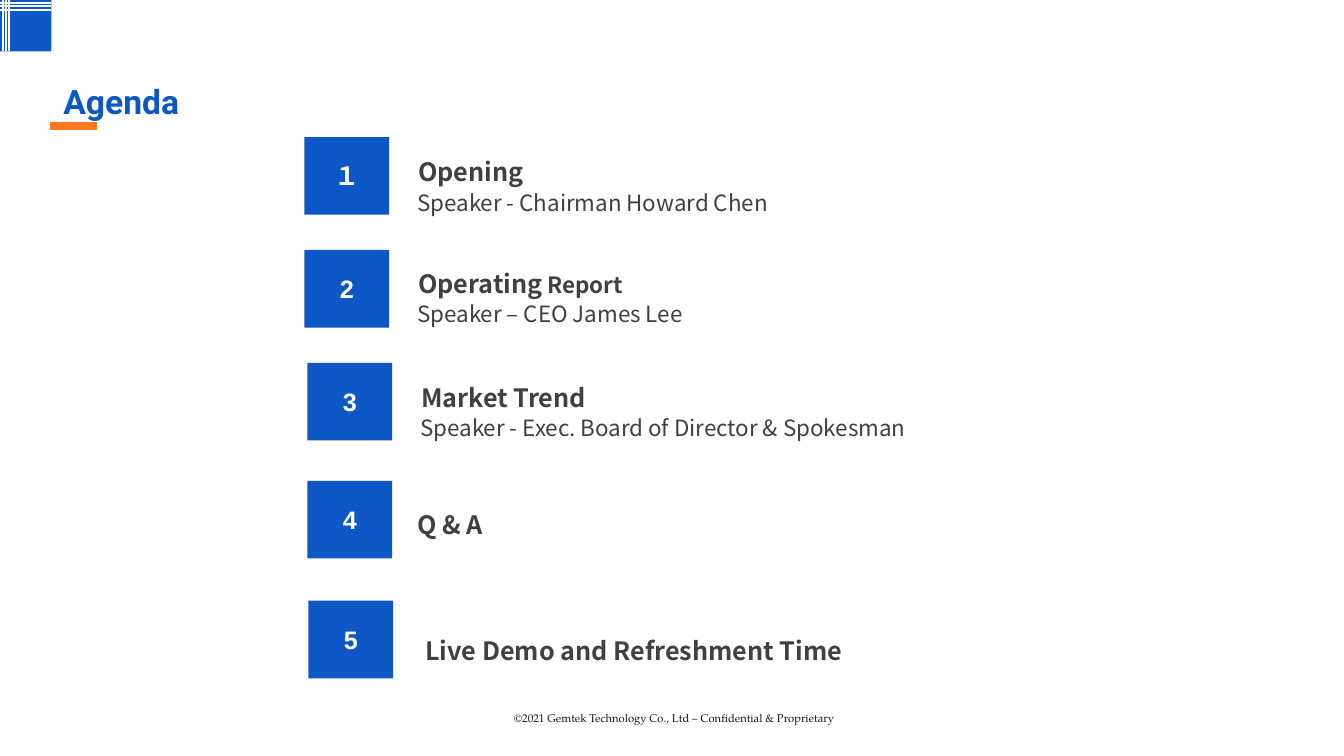
"""Build the agenda slide with five numbered topics and their speakers."""
from pptx import Presentation
from pptx.dml.color import RGBColor
from pptx.enum.shapes import MSO_CONNECTOR as Connector, MSO_SHAPE as Shape
from pptx.enum.text import MSO_ANCHOR as Anchor, PP_ALIGN as Align
from pptx.oxml.ns import qn
from pptx.util import Inches, Pt
from lxml import etree

COLORS = {"blue": "0D58C4", "title": "0B58C4", "orange": "FF7822",
          "white": "FFFFFF", "text": "404040", "footer": "181717"}
BODY_FONT = "Noto Sans CJK SC"
TITLE = "Agenda"
FOOTER = "©2021 Gemtek Technology Co., Ltd – Confidential & Proprietary"
TOPICS = [
    {"number": "１", "tile": (3.02, 1.36), "label": (4.05, 1.35, 3.23),
     "heading": [("Opening", 18)], "speaker": "Speaker - Chairman Howard Chen"},
    {"number": "2", "tile": (3.02, 2.48), "label": (4.05, 2.46, 3.23),
     "heading": [("Operating", 18), (" Report", 16)], "speaker": "Speaker – CEO James Lee"},
    {"number": "3", "tile": (3.05, 3.6), "label": (4.08, 3.59, 3.23),
     "heading": [("Market Trend", 18)],
     "speaker": "Speaker - Exec. Board of Director & Spokesman"},
    {"number": "4", "tile": (3.05, 4.77), "label": (4.04, 4.85, 3.23),
     "heading": [("Q & A", 18)], "speaker": None},
    {"number": "5", "tile": (3.06, 5.96), "label": (4.12, 6.1, 5.99),
     "heading": [("Live Demo and Refreshment Time", 18)], "speaker": None},
]
CORNER = 0.51
COLUMN_STRIPES = [(0.03, 1.5), (0.06, 1), (0.08, 0.5), (0.09, 0.25)]
ROW_STRIPES = [(0.03, 1.5), (0.06, 1), (0.09, 0.5), (0.1, 0.25)]
TILE_SIZE = (0.84, 0.77)
SPEAKER_DROP = 0.34


def color(name):
    """Return the named colour."""
    return RGBColor.from_string(COLORS[name])


def add_spans(para, spans, font, shade, bold=False):
    """Write sized spans of text into a paragraph."""
    for text, size in spans:
        span = para.add_run()
        span.text = text
        span.font.size = Pt(size)
        span.font.name = font
        span.font.bold = bold
        span.font.color.rgb = color(shade)
        east_asian = etree.SubElement(span.font._element, qn("a:ea"))
        east_asian.set("typeface", font)


def add_block(page, left, top, width, height, fill):
    """Add a plain filled rectangle."""
    block = page.shapes.add_shape(
        Shape.RECTANGLE, Inches(left), Inches(top), Inches(width), Inches(height))
    block.shadow.inherit = False
    block.fill.solid()
    block.fill.fore_color.rgb = color(fill)
    block.line.fill.background()
    return block


def add_line(page, start, end, shade, weight):
    """Add a straight line without a shadow."""
    line = page.shapes.add_connector(
        Connector.STRAIGHT, *(Inches(value) for value in (*start, *end)))
    line.line.color.rgb = color(shade)
    line.line.width = Pt(weight)
    etree.SubElement(line._element.spPr, qn("a:effectLst"))


def add_text(page, place, spans, font, shade, bold=False, spacing=1.0, wrap=True):
    """Add a text box and return it."""
    box = page.shapes.add_textbox(*(Inches(value) for value in place))
    box.text_frame.word_wrap = wrap
    para = box.text_frame.paragraphs[0]
    para.line_spacing = spacing
    add_spans(para, spans, font, shade, bold)
    return box


def add_topic(page, topic):
    """Add a numbered tile with its heading and speaker."""
    tile = add_block(page, *topic["tile"], *TILE_SIZE, "blue")
    tile.text_frame.vertical_anchor = Anchor.MIDDLE
    para = tile.text_frame.paragraphs[0]
    para.alignment = Align.CENTER
    add_spans(para, [(topic["number"], 18)], "Arial", "white", True)
    left, top, width = topic["label"]
    if topic["speaker"]:
        add_text(page, (left - 0.01, top + SPEAKER_DROP, 8.22, 0.46),
                 [(topic["speaker"], 16)], BODY_FONT, "text", spacing=1.5)
    add_text(page, (left, top, width, 0.5), topic["heading"],
             BODY_FONT, "text", bold=True, spacing=1.5)


def main():
    """Compose and save the slide."""
    deck = Presentation()
    deck.slide_width, deck.slide_height = Inches(13.33), Inches(7.5)
    page = deck.slides.add_slide(deck.slide_layouts[6])
    add_block(page, 0, 0, CORNER, CORNER, "blue")
    add_line(page, (0.5, 1.25), (0.96, 1.25), "orange", 6)
    footer = add_text(page, (4.96, 7.01, 3.42, 0.24), [(FOOTER, 8)],
                      "TeX Gyre Pagella", "footer", wrap=False)
    footer.text_frame.paragraphs[0].alignment = Align.RIGHT
    for offset, weight in COLUMN_STRIPES:
        add_line(page, (offset, 0), (offset, CORNER), "white", weight)
    for offset, weight in ROW_STRIPES:
        add_line(page, (CORNER, offset), (0, offset), "white", weight)
    title = add_text(page, (0.53, 0.83, 12.21, 0.4), [(TITLE, 24)],
                     "Roboto", "title", bold=True, spacing=0.9)
    title.text_frame.vertical_anchor = Anchor.MIDDLE
    for topic in TOPICS:
        add_topic(page, topic)
    deck.save("out.pptx")


if __name__ == "__main__":
    main()
